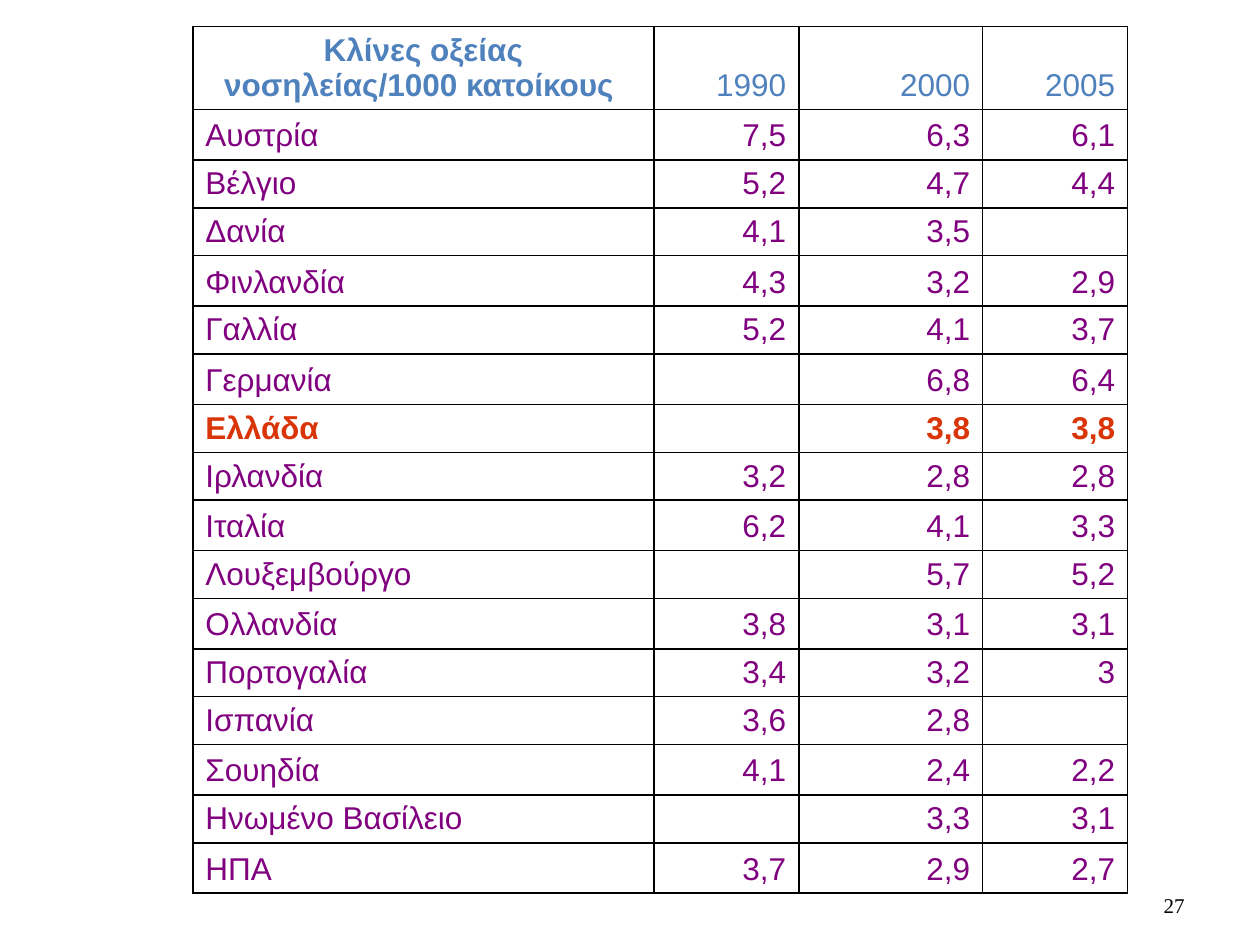
import pptx
import pptx.util
import pptx.dml.color
import pptx.enum.text
import pptx.oxml.ns
import lxml.etree

Inches, Pt = pptx.util.Inches, pptx.util.Pt
RGBColor = pptx.dml.color.RGBColor
ALIGN = pptx.enum.text.PP_ALIGN
ANCHOR = pptx.enum.text.MSO_ANCHOR

BLUE = RGBColor(0x4F, 0x81, 0xBD)
PURPLE = RGBColor(0x80, 0x00, 0x80)
RED = RGBColor(0xDA, 0x35, 0x08)
BLACK = RGBColor(0, 0, 0)

HEAD = ("Κλίνες οξείας νοσηλείας/1000 κατοίκους ", "1990", "2000", "2005")
BEDS = [
    ("Αυστρία", "7,5", "6,3", "6,1"),
    ("Βέλγιο", "5,2", "4,7", "4,4"),
    ("Δανία", "4,1", "3,5", ""),
    ("Φινλανδία", "4,3", "3,2", "2,9"),
    ("Γαλλία", "5,2", "4,1", "3,7"),
    ("Γερμανία", "", "6,8", "6,4"),
    ("Ελλάδα", "", "3,8", "3,8"),
    ("Ιρλανδία", "3,2", "2,8", "2,8"),
    ("Ιταλία", "6,2", "4,1", "3,3"),
    ("Λουξεμβούργο", "", "5,7", "5,2"),
    ("Ολλανδία", "3,8", "3,1", "3,1"),
    ("Πορτογαλία", "3,4", "3,2", "3"),
    ("Ισπανία", "3,6", "2,8", ""),
    ("Σουηδία", "4,1", "2,4", "2,2"),
    ("Ηνωμένο Βασίλειο", "", "3,3", "3,1"),
    ("ΗΠΑ", "3,7", "2,9", "2,7"),
]
FOCUS = "Ελλάδα"
TALL = {"Αυστρία", "Φινλανδία", "Γερμανία", "Ιταλία", "Ολλανδία", "Σουηδία", "ΗΠΑ"}
WIDTHS = (3.66, 1.15, 1.46, 1.15)


def style(para, face, size, color, align, bold=False):
    para.alignment = align
    font = para.font
    font.name, font.size, font.bold = face, Pt(size), bold
    font.color.rgb = color


def border(cell):
    props = cell._tc.get_or_add_tcPr()
    qn = pptx.oxml.ns.qn
    for side in ("lnL", "lnR", "lnT", "lnB"):
        line = lxml.etree.SubElement(props, qn("a:" + side), w=str(Pt(1)))
        fill = lxml.etree.SubElement(line, qn("a:solidFill"))
        lxml.etree.SubElement(fill, qn("a:srgbClr"), val=str(BLACK))


def add_beds(slide):
    rows = [HEAD] + BEDS
    highs = [0.66] + [0.4 if row[0] in TALL else 0.38 for row in BEDS]
    frame = slide.shapes.add_table(
        len(rows), len(HEAD), Inches(1.53), Inches(0.21),
        Inches(sum(WIDTHS)), Inches(sum(highs)))
    table = frame.table
    table.first_row = table.horz_banding = False
    for col, width in zip(table.columns, WIDTHS):
        col.width = Inches(width)
    for r, (row, high) in enumerate(zip(rows, highs)):
        table.rows[r].height = Inches(high)
        focus = row[0] == FOCUS
        color = BLUE if r == 0 else RED if focus else PURPLE
        for c, text in enumerate(row):
            cell = table.cell(r, c)
            cell.text = text
            cell.vertical_anchor = ANCHOR.BOTTOM
            cell.margin_top, cell.margin_bottom = 0, Inches(0.05)
            border(cell)
            cell.fill.background()
            title = r == 0 and c == 0
            align = ALIGN.CENTER if title else ALIGN.RIGHT if c else ALIGN.LEFT
            style(cell.text_frame.paragraphs[0], "Arial", 18, color, align,
                  title or focus)


def add_number(slide):
    box = slide.shapes.add_textbox(
        Inches(7.17), Inches(6.83), Inches(2.33), Inches(0.5))
    frame = box.text_frame
    frame.word_wrap = True
    frame.vertical_anchor = ANCHOR.BOTTOM
    frame.text = "27"
    style(frame.paragraphs[0], "Times New Roman", 12, BLACK, ALIGN.RIGHT)


def main():
    deck = pptx.Presentation()
    deck.slide_width, deck.slide_height = Inches(10), Inches(7.5)
    slide = deck.slides.add_slide(deck.slide_layouts[6])
    add_number(slide)
    add_beds(slide)
    deck.save("out.pptx")


if __name__ == "__main__":
    main()
